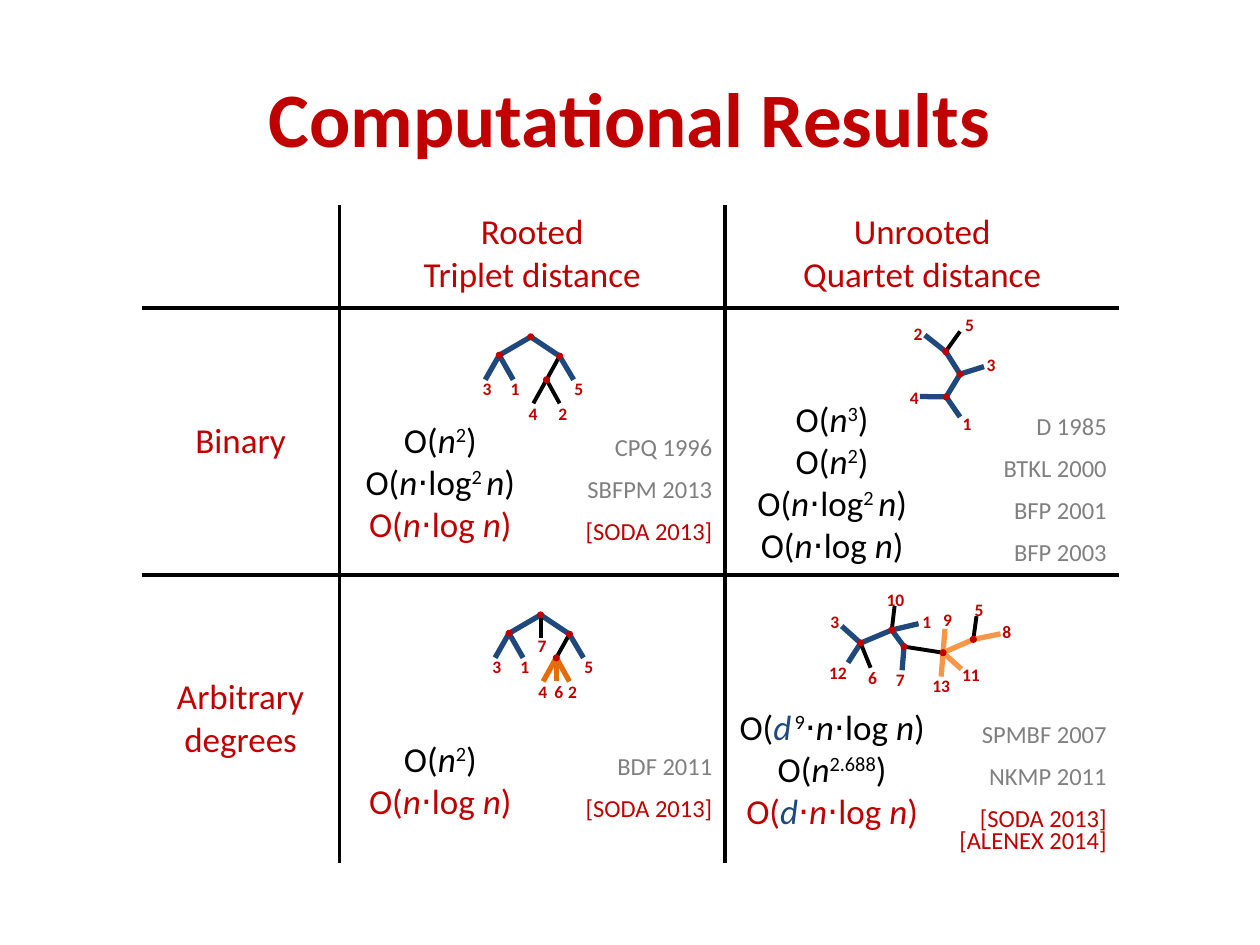
from lxml import etree
from pptx import Presentation
from pptx.dml.color import RGBColor
from pptx.enum import shapes, text
from pptx.oxml import ns
from pptx.util import Pt

COLORS = {"red": "C00000", "black": "000000", "gray": "808080", "blue": "1F497D",
          "dark orange": "E46C0A", "orange": "F79646"}
FONT = "Calibri"
TITLE = "Computational Results"

# In a formula, "|" separates runs and the first character of a run may pick its style.
RUN_STYLES = {"_": {"italic": True}, "^": {"baseline": 30000},
              "@": {"italic": True, "color": "blue"}, "~": {"size": 8}}
CUBIC, QUADRATIC = "O(|_n|^3|)", "O(|_n|^2|)"
LOG_SQUARED = "O(|_n|⋅log|^2 |_n|)"
LOG_LINEAR = "O(|_n|⋅log |_n|)"

HEADERS = {1: ["Rooted", "Triplet distance"], 3: ["Unrooted", "Quartet distance"]}
ROW_NAMES = {1: ["Binary"], 2: ["Arbitrary", "degrees"]}
# (row, column): lines left free for the tree, then (formula, colour, source)
RESULTS = {
    (1, 1): (2, [(QUADRATIC, "black", "CPQ 1996"),
                 (LOG_SQUARED, "black", "SBFPM 2013"),
                 (LOG_LINEAR, "red", "[SODA 2013]")]),
    (1, 3): (2, [(CUBIC, "black", "D 1985"),
                 (QUADRATIC, "black", "BTKL 2000"),
                 (LOG_SQUARED, "black", "BFP 2001"),
                 (LOG_LINEAR, "black", "BFP 2003")]),
    (2, 1): (3, [(QUADRATIC, "black", "BDF 2011"),
                 (LOG_LINEAR, "red", "[SODA 2013]")]),
    (2, 3): (3, [("O(|@d|~ |^9|⋅|_n|⋅log |_n|)", "black", "SPMBF 2007"),
                 ("O(|_n|^2.688|)", "black", "NKMP 2011"),
                 ("O(|@d|⋅|_n|⋅log |_n|)", "red", "[SODA 2013]")]),
}
EXTRA_SOURCE = {(2, 3): "[ALENEX 2014]"}
TABLE_LEFT, TABLE_TOP = 81, 117
COLUMN_WIDTHS = [113, 115.2, 105.1, 122.4, 103]
ROW_HEIGHTS = [59, 152.7, 164.2]
LINE_HEIGHT, EXTRA_LINE_HEIGHT = 24, 13
CELL_MARGIN = 3.6
NO_GRID_STYLE = "{2D5ABB26-0587-4C30-8999-92F81FD0307C}"

# Leaves are (label, parent node, branch tip, label centre, branch colour).
ROOTED_NODES = {"root": (0, 0), "left": (-18, 10.5), "right": (16.5, 11), "low": (9, 24.5)}
ROOTED_BRANCHES = [("root", "left", "blue"), ("root", "right", "blue"),
                   ("right", "low", "black")]
ROOTED_LEAVES = [("3", "left", (-26, 24.5), (-25, 29.5), "blue"),
                 ("1", "left", (-10, 24.5), (-9, 29.5), "blue"),
                 ("5", "right", (24.5, 24.5), (27.5, 29.5), "blue")]


def low_leaves(color):
    return [("4", "low", (1.5, 38), (1.3, 44), color),
            ("2", "low", (16.5, 38), (18.3, 44), color)]


# Each tree is (origin, nodes, branches, leaves).
TREES = [
    ((303.3, 192.5), ROOTED_NODES, ROOTED_BRANCHES, ROOTED_LEAVES + low_leaves("black")),
    ((0, 0),
     {"top": (540.4, 200.9), "middle": (548.6, 213.8), "bottom": (540.7, 226.8)},
     [("top", "middle", "blue"), ("middle", "bottom", "blue")],
     [("1", "bottom", (548.6, 238.3), (552.6, 242.3), "blue"),
      ("3", "middle", (562.3, 209.5), (566.3, 208.4), "blue"),
      ("2", "top", (528.5, 191.5), (524.5, 190.4), "blue"),
      ("5", "top", (548.6, 189.4), (554, 185.4), "black"),
      ("4", "bottom", (525.6, 226.6), (522.4, 227.2), "blue")]),
    ((308.9, 351.4), ROOTED_NODES, ROOTED_BRANCHES,
     ROOTED_LEAVES + low_leaves("dark orange")
     + [("6", "low", (9, 38), (10.4, 44), "dark orange"),
        ("7", "root", (0, 13), (0.9, 17.5), "black")]),
    ((0, 0),
     {"a": (491.8, 367.5), "b": (509.6, 360), "c": (516.6, 369.5),
      "d": (538.9, 373), "e": (556.2, 365.4)},
     [("a", "b", "blue"), ("b", "c", "blue"), ("c", "d", "black"), ("d", "e", "orange")],
     [("12", "a", (484.6, 378.7), (478.8, 384.1), "blue"),
      ("3", "a", (481, 357.8), (477, 355.3), "blue"),
      ("6", "a", (497.5, 381.6), (498.6, 387), "black"),
      ("10", "b", (511.2, 346.3), (511.6, 342.4), "black"),
      ("1", "b", (524.9, 356.4), (529.6, 355.3), "blue"),
      ("7", "c", (515.5, 383), (514.4, 388.4), "blue"),
      ("13", "d", (537.8, 386.6), (537.8, 392), "orange"),
      ("11", "d", (549.4, 382.3), (554.8, 385.6), "orange"),
      ("9", "d", (540, 359.3), (541.4, 353.9), "orange"),
      ("5", "e", (558, 352.1), (559.4, 348.1), "black"),
      ("8", "e", (571.7, 362.2), (575.3, 361.1), "orange")]),
]
NODE_SIZE, DIGIT_WIDTH, LABEL_HEIGHT = 4, 12, 19.4


def rgb(color):
    return RGBColor.from_string(COLORS[color])


def add_run(paragraph, words, size, color, bold=False, italic=False, baseline=None):
    run = paragraph.add_run()
    run.text = words
    formats = {"name": FONT, "size": Pt(size), "bold": bold, "italic": italic}
    for name, value in formats.items():
        setattr(run.font, name, value)
    run.font.color.rgb = rgb(color)
    if baseline:
        run.font._element.set("baseline", str(baseline))


def write_lines(frame, lines, size, align, heights=None):
    """Write (formula, colour) lines, one paragraph each."""
    for index, (formula, color) in enumerate(lines):
        paragraph = frame.paragraphs[0] if index == 0 else frame.add_paragraph()
        paragraph.alignment = align
        if heights:
            paragraph.line_spacing = Pt(heights[index])
        for piece in formula.split("|"):
            style = RUN_STYLES.get(piece[0], {})
            add_run(paragraph, piece[1:] if style else piece,
                    **{"size": size, "color": color, **style})


def add_textbox(parent, left, top, width, height, words, size):
    box = parent.shapes.add_textbox(Pt(left), Pt(top), Pt(width), Pt(height))
    frame = box.text_frame
    formats = {"word_wrap": True, "vertical_anchor": text.MSO_ANCHOR.MIDDLE,
               "margin_left": 0, "margin_right": 0, "margin_top": 0, "margin_bottom": 0}
    for name, value in formats.items():
        setattr(frame, name, value)
    frame.paragraphs[0].alignment = text.PP_ALIGN.CENTER
    add_run(frame.paragraphs[0], words, size, "red", bold=True)


def set_borders(cell, row, column):
    """Rule the inner grid, and state explicitly which sides stay open."""
    sides = {"lnL": column in (1, 3), "lnR": column in (0, 2),
             "lnT": row > 0, "lnB": row < len(ROW_HEIGHTS) - 1}
    properties = cell._tc.get_or_add_tcPr()
    for side, visible in sides.items():
        line = etree.SubElement(properties, ns.qn(f"a:{side}"), w=str(Pt(2.25 if visible else 0)))
        fill = etree.SubElement(line, ns.qn("a:solidFill" if visible else "a:noFill"))
        if visible:
            etree.SubElement(fill, ns.qn("a:srgbClr"), val=COLORS["black"])


def add_results_table(slide):
    frame = slide.shapes.add_table(
        len(ROW_HEIGHTS), len(COLUMN_WIDTHS), Pt(TABLE_LEFT), Pt(TABLE_TOP),
        Pt(sum(COLUMN_WIDTHS)), Pt(sum(ROW_HEIGHTS)))
    table = frame.table
    table._tbl.tblPr.find(ns.qn("a:tableStyleId")).text = NO_GRID_STYLE
    table.first_row = table.horz_banding = False
    for column, width in zip(table.columns, COLUMN_WIDTHS):
        column.width = Pt(width)
    for row, height in zip(table.rows, ROW_HEIGHTS):
        row.height = Pt(height)
    for row in range(len(ROW_HEIGHTS)):
        for column in range(len(COLUMN_WIDTHS)):
            cell = table.cell(row, column)
            set_borders(cell, row, column)
            cell.fill.background()
            if row:
                cell.vertical_anchor = text.MSO_ANCHOR.MIDDLE

    center, right = text.PP_ALIGN.CENTER, text.PP_ALIGN.RIGHT
    for column, words in HEADERS.items():
        table.cell(0, column).merge(table.cell(0, column + 1))
        write_lines(table.cell(0, column).text_frame, [(w, "red") for w in words], 20, center)
    for row, words in ROW_NAMES.items():
        write_lines(table.cell(row, 0).text_frame, [(w, "red") for w in words], 20, center)
    for (row, column), (free_lines, results) in RESULTS.items():
        formulas = [(formula, color) for formula, color, _ in results]
        sources = [(source, "red" if source.startswith("[") else "gray")
                   for _, _, source in results]
        heights = [LINE_HEIGHT] * len(results)
        if (row, column) in EXTRA_SOURCE:
            sources.append((EXTRA_SOURCE[row, column], "red"))
            heights.append(EXTRA_LINE_HEIGHT)
            table.cell(row, column).margin_bottom = Pt(CELL_MARGIN + EXTRA_LINE_HEIGHT)
        for offset, lines, size, align in ((0, formulas, 20, center), (1, sources, 14, right)):
            cell = table.cell(row, column + offset)
            cell.margin_top = Pt(CELL_MARGIN + free_lines * LINE_HEIGHT)
            write_lines(cell.text_frame, lines, size, align, heights)


def add_branch(group, start, end, color):
    line = group.shapes.add_connector(
        shapes.MSO_CONNECTOR.STRAIGHT, *(Pt(value) for value in (*start, *end)))
    line.line.color.rgb = rgb(color)
    line.line.width = Pt(2.25 if color == "black" else 3)
    etree.SubElement(line._element.spPr, ns.qn("a:effectLst"))


def add_tree(slide, origin, nodes, branches, leaves):
    def place(point):
        return point[0] + origin[0], point[1] + origin[1]

    group = slide.shapes.add_group_shape()
    for start, end, color in branches:
        add_branch(group, place(nodes[start]), place(nodes[end]), color)
    for label, parent, tip, label_center, color in leaves:
        add_branch(group, place(nodes[parent]), place(tip), color)
        x, y = place(label_center)
        width = DIGIT_WIDTH * len(label)
        add_textbox(group, x - width / 2, y - LABEL_HEIGHT / 2, width, LABEL_HEIGHT, label, 10)
    for x, y in map(place, nodes.values()):
        dot = group.shapes.add_shape(
            shapes.MSO_SHAPE.OVAL, Pt(x - NODE_SIZE / 2), Pt(y - NODE_SIZE / 2),
            Pt(NODE_SIZE), Pt(NODE_SIZE))
        dot.shadow.inherit = False
        dot.fill.solid()
        dot.fill.fore_color.rgb = rgb("red")
        dot.line.fill.background()


presentation = Presentation()
presentation.slide_width, presentation.slide_height = Pt(720), Pt(540)
slide = presentation.slides.add_slide(presentation.slide_layouts[6])
add_results_table(slide)
add_textbox(slide, 36, 21.6, 648, 90, TITLE, 44)
for tree in TREES:
    add_tree(slide, *tree)
presentation.save("out.pptx")
